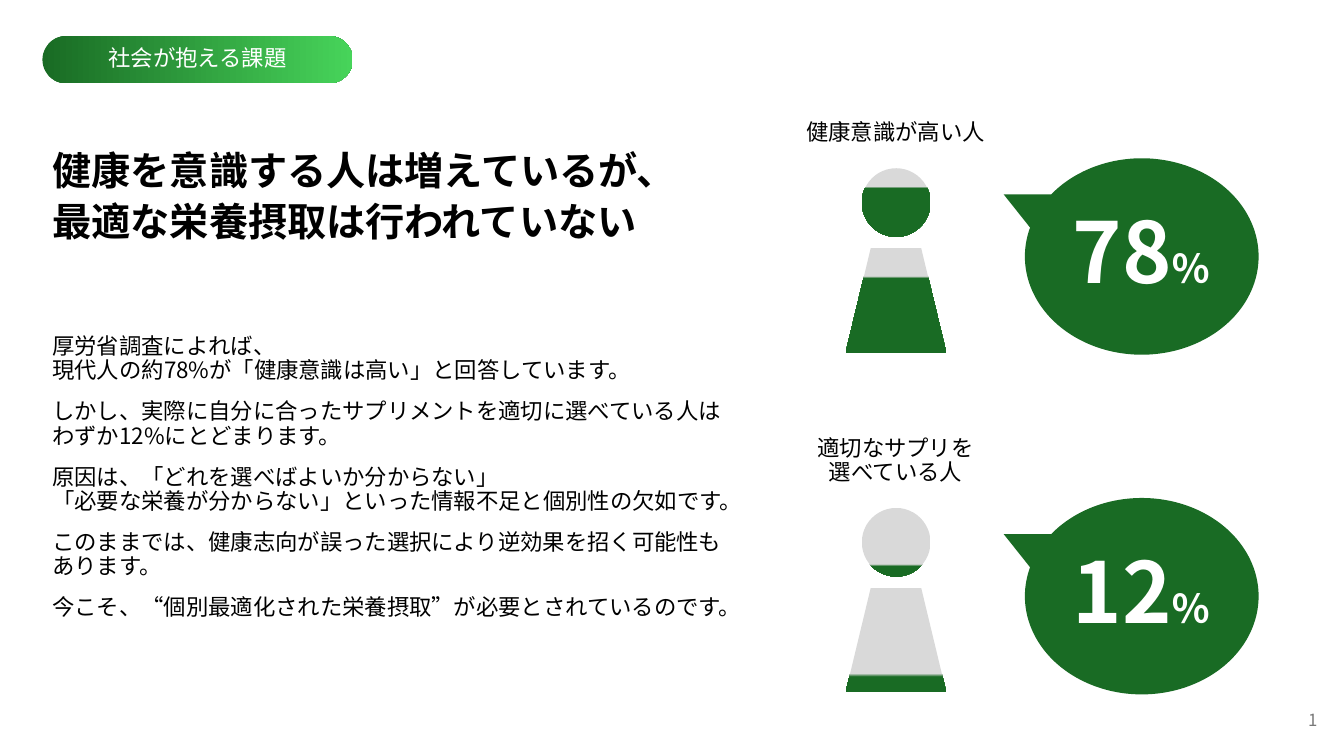
"""Build the slide on health awareness versus suitable supplement choice."""
from lxml.etree import SubElement
from pptx import Presentation
from pptx.dml.color import RGBColor
from pptx.enum.shapes import MSO_SHAPE
from pptx.enum.text import MSO_ANCHOR, MSO_AUTO_SIZE, PP_ALIGN
from pptx.oxml.ns import qn
from pptx.util import Cm, Pt

FONT = "Noto Sans CJK JP"
COLORS = {"green": "196B24", "light": "47D45A", "gray": "D9D9D9",
          "number": "797979", "black": "000000", "white": "FFFFFF"}


def write(sp, texts, size, color="black", align=PP_ALIGN.LEFT, before=6,
          bold=False, anchor=MSO_ANCHOR.MIDDLE):
    tf = sp.text_frame
    tf.word_wrap = True
    tf.auto_size = MSO_AUTO_SIZE.NONE
    tf.vertical_anchor = anchor
    for i, text in enumerate(texts):
        p = tf.paragraphs[0] if i == 0 else tf.add_paragraph()
        p.text = text
        p.alignment = align
        p.line_spacing = 0.9
        p.space_before = Pt(before)
        p.font.size = Pt(size)
        p.font.bold = bold
        p.font.name = FONT
        p.font.color.rgb = RGBColor.from_string(COLORS[color])
        SubElement(p._p.pPr.find(qn("a:defRPr")), qn("a:ea"), typeface=FONT)
    return tf.paragraphs[0]


def shade(sp, stops, angle):
    sp.shadow.inherit = False
    sp.line.fill.background()
    sp.fill.gradient()
    sp.fill.gradient_angle = angle
    gs_list = sp._element.spPr.find(".//" + qn("a:gsLst"))
    gs_list.clear()
    for percent, color in stops:
        gs = SubElement(gs_list, qn("a:gs"), pos=str(percent * 1000))
        SubElement(gs, qn("a:srgbClr"), val=COLORS[color])


prs = Presentation()
prs.slide_width, prs.slide_height = Cm(33.87), Cm(19.05)
s = prs.slides.add_slide(prs.slide_layouts[5])

title = s.shapes.title
title.left, title.top, title.width, title.height = Cm(1.07), Cm(3.61), Cm(15.62), Cm(2.79)
write(title, ["健康を意識する人は増えているが、", "最適な栄養摂取は行われていない"], 28, bold=True)

tag = s.shapes.add_shape(MSO_SHAPE.ROUNDED_RECTANGLE, Cm(1.07), Cm(0.91), Cm(7.82), Cm(1.19))
tag.adjustments[0] = 0.5
shade(tag, [(0, "green"), (100, "light")], 0)
write(tag, ["社会が抱える課題"], 16, "white", PP_ALIGN.CENTER)

body = s.shapes.add_textbox(Cm(1.07), Cm(6.96), Cm(17.78), Cm(10.16))
write(body, [
    "厚労省調査によれば、\v現代人の約78%が「健康意識は高い」と回答しています。",
    "しかし、実際に自分に合ったサプリメントを適切に選べている人は\vわずか12%にとどまります。",
    "原因は、「どれを選べばよいか分からない」\v「必要な栄養が分からない」といった情報不足と個別性の欠如です。",
    "このままでは、健康志向が誤った選択により逆効果を招く可能性も\vあります。",
    "今こそ、“個別最適化された栄養摂取”が必要とされているのです。",
], 16, before=12)

people = [("健康意識が高い人", "78", 27, 29), ("適切なサプリを\v選べている人", "12", 82, 85)]
for i, (label, value, gray_end, green_start) in enumerate(people):
    top = 1.55 + i * 8.56
    caption = s.shapes.add_textbox(Cm(19.56), Cm(top), Cm(6.02), Cm(2.24))
    write(caption, [label], 16, align=PP_ALIGN.CENTER, anchor=MSO_ANCHOR.BOTTOM)

    callout = s.shapes.add_shape(MSO_SHAPE.OVAL_CALLOUT, Cm(25.83), Cm(top + 2.44), Cm(5.89), Cm(4.95))
    callout.adjustments[0], callout.adjustments[1] = -0.591, -0.316
    callout.shadow.inherit = False
    callout.fill.solid()
    callout.fill.fore_color.rgb = RGBColor.from_string(COLORS["green"])
    callout.line.fill.background()
    p = write(callout, [value], 60, "white", PP_ALIGN.CENTER, bold=True)
    r = p.add_run()
    r.text = "％"
    r.font.size = Pt(28)

    person = s.shapes.add_group_shape()
    head = person.shapes.add_shape(MSO_SHAPE.OVAL, Cm(21.72), Cm(top + 2.69), Cm(1.73), Cm(1.73))
    torso = person.shapes.add_shape(MSO_SHAPE.TRAPEZOID, Cm(21.31), Cm(top + 4.7), Cm(2.54), Cm(2.64))
    for part in (head, torso):
        shade(part, [(0, "gray"), (gray_end, "gray"), (green_start, "green"), (100, "green")], 270)

number = s.shapes.add_textbox(Cm(32.21), Cm(17.65), Cm(1.24), Cm(1.02))
p = write(number, [""], 12, "number", PP_ALIGN.RIGHT, before=0)
field = SubElement(p._p, qn("a:fld"), id="{B6F15528-21DE-4FAA-801E-634DDDAF4B2B}", type="slidenum")
SubElement(field, qn("a:rPr"), lang="ja-JP")
SubElement(field, qn("a:t")).text = "1"

prs.save("out.pptx")
